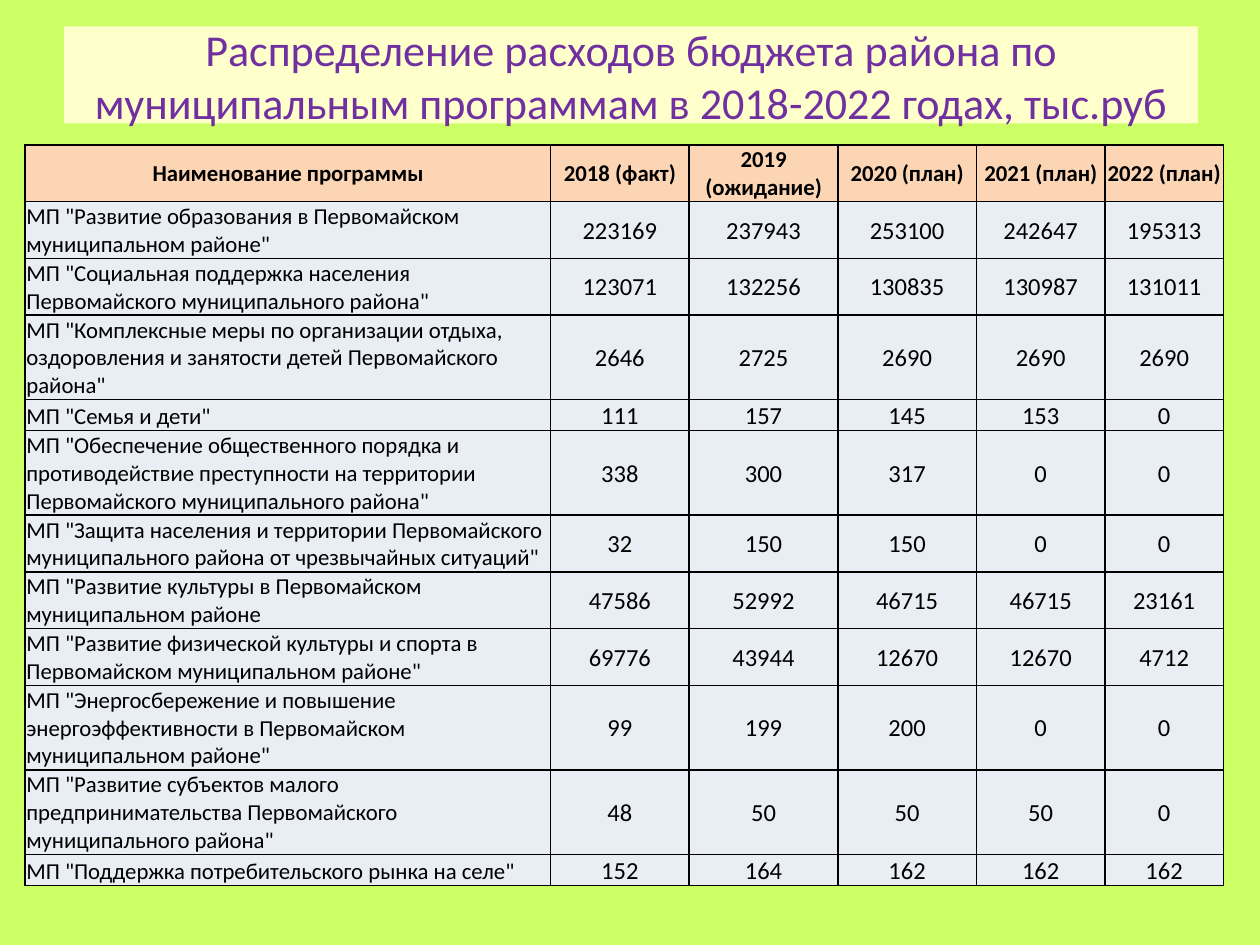
from lxml import etree
from pptx import Presentation
from pptx.dml.color import RGBColor
from pptx.enum import text
from pptx.oxml import ns
from pptx.util import Inches, Pt

LIME = RGBColor(0xCC, 0xFF, 0x66)
CREAM = RGBColor(0xFF, 0xFF, 0xCC)
PURPLE = RGBColor(0x70, 0x30, 0xA0)
OUTLINE_BLUE = RGBColor(0x55, 0x8E, 0xD5)
PEACH = RGBColor(0xFC, 0xD5, 0xB5)
PALE_BLUE = RGBColor(0xE9, 0xED, 0xF4)
BLACK = RGBColor(0, 0, 0)
FONT = "Calibri"

TITLE = "Распределение расходов бюджета района по муниципальным программам в 2018-2022 годах, тыс.руб"
HEADINGS = ("Наименование программы", "2018 (факт)", "2019 (ожидание)",
            "2020 (план)", "2021 (план)", "2022 (план)")
PROGRAMS = [
    ('МП "Развитие образования в Первомайском муниципальном районе"',
     2, (223169, 237943, 253100, 242647, 195313)),
    ('МП "Социальная поддержка населения Первомайского муниципального района"',
     2, (123071, 132256, 130835, 130987, 131011)),
    ('МП "Комплексные меры по организации отдыха, оздоровления и занятости детей Первомайского района"',
     3, (2646, 2725, 2690, 2690, 2690)),
    ('МП "Семья и дети"', 1, (111, 157, 145, 153, 0)),
    ('МП "Обеспечение общественного порядка и противодействие преступности на территории '
     'Первомайского муниципального района"', 3, (338, 300, 317, 0, 0)),
    ('МП "Защита населения и территории Первомайского муниципального района от чрезвычайных ситуаций"',
     2, (32, 150, 150, 0, 0)),
    ('МП "Развитие культуры в Первомайском муниципальном районе',
     2, (47586, 52992, 46715, 46715, 23161)),
    ('МП "Развитие физической культуры и спорта в Первомайском муниципальном районе"',
     2, (69776, 43944, 12670, 12670, 4712)),
    ('МП "Энергосбережение и повышение энергоэффективности в Первомайском муниципальном районе"',
     3, (99, 199, 200, 0, 0)),
    ('МП "Развитие субъектов малого предпринимательства Первомайского муниципального района"',
     3, (48, 50, 50, 50, 0)),
    ('МП "Поддержка потребительского рынка на селе"', 1, (152, 164, 162, 162, 162)),
]
COLUMN_WIDTHS = (4.17, 1.1, 1.18, 1.1, 1.02, 0.94)
HEIGHT_BY_LINES = {1: 0.24, 2: 0.45, 3: 0.67}


def add_line(parent, tag, width, color):
    """Append a solid line element to parent and return it."""
    line = etree.SubElement(parent, ns.qn(tag), w=str(Pt(width)))
    fill = etree.SubElement(line, ns.qn("a:solidFill"))
    etree.SubElement(fill, ns.qn("a:srgbClr"), val=str(color))
    return line


def add_run(paragraph, wording, size, color, bold=False):
    """Add one formatted run and return it."""
    run = paragraph.add_run()
    run.text = wording
    run.font.name = FONT
    run.font.size = Pt(size)
    run.font.bold = bold
    run.font.color.rgb = color
    return run


def place_title(slide, left, top, width, height):
    """Put the heading in the title placeholder, filling the given box."""
    title = slide.shapes.title
    title.left, title.top, title.width, title.height = map(Inches, (left, top, width, height))
    title.fill.solid()
    title.fill.fore_color.rgb = CREAM
    frame = title.text_frame
    frame.word_wrap = True
    frame.auto_size = text.MSO_AUTO_SIZE.NONE
    frame.vertical_anchor = text.MSO_ANCHOR.MIDDLE
    heading = frame.paragraphs[0]
    heading.alignment = text.PP_ALIGN.CENTER
    run = add_run(heading, TITLE, 25.2, PURPLE)
    properties = run.font._element
    properties.insert(0, add_line(properties, "a:ln", 0.75, OUTLINE_BLUE))


def fill_cell(cell, wording, size, fill, align=text.PP_ALIGN.CENTER,
              anchor=text.MSO_ANCHOR.MIDDLE, bold=False):
    """Write and format one bordered table cell."""
    cell.margin_left = cell.margin_right = cell.margin_top = Inches(0.01)
    cell.margin_bottom = 0
    cell.vertical_anchor = anchor
    paragraph = cell.text_frame.paragraphs[0]
    paragraph.alignment = align
    add_run(paragraph, wording, size, BLACK, bold)
    properties = cell._tc.get_or_add_tcPr()
    for side in ("L", "R", "T", "B"):
        add_line(properties, f"a:ln{side}", 1, BLACK)
    cell.fill.solid()
    cell.fill.fore_color.rgb = fill


def place_budget_table(slide, left, top):
    """Build the table of programme spending from the given corner."""
    line_counts = [2] + [lines for _, lines, _ in PROGRAMS]
    heights = [HEIGHT_BY_LINES[lines] for lines in line_counts]
    budget = slide.shapes.add_table(
        len(heights), len(HEADINGS), Inches(left), Inches(top),
        Inches(sum(COLUMN_WIDTHS)), Inches(sum(heights))).table
    for column, width in zip(budget.columns, COLUMN_WIDTHS):
        column.width = Inches(width)
    for row, height in zip(budget.rows, heights):
        row.height = Inches(height)
    for column, heading in enumerate(HEADINGS):
        fill_cell(budget.cell(0, column), heading, 13, PEACH, bold=True)
    for row, (program, _, amounts) in enumerate(PROGRAMS, 1):
        fill_cell(budget.cell(row, 0), program, 13, PALE_BLUE,
                  text.PP_ALIGN.LEFT, text.MSO_ANCHOR.BOTTOM)
        for column, amount in enumerate(amounts, 1):
            fill_cell(budget.cell(row, column), str(amount), 14, PALE_BLUE)


def main():
    """Build and save the budget slide."""
    deck = Presentation()
    deck.slide_width, deck.slide_height = Inches(10), Inches(7.5)
    slide = deck.slides.add_slide(deck.slide_layouts[5])
    slide.background.fill.solid()
    slide.background.fill.fore_color.rgb = LIME
    place_title(slide, 0.51, 0.21, 9, 0.77)
    place_budget_table(slide, 0.2, 1.15)
    deck.save("out.pptx")


if __name__ == "__main__":
    main()
